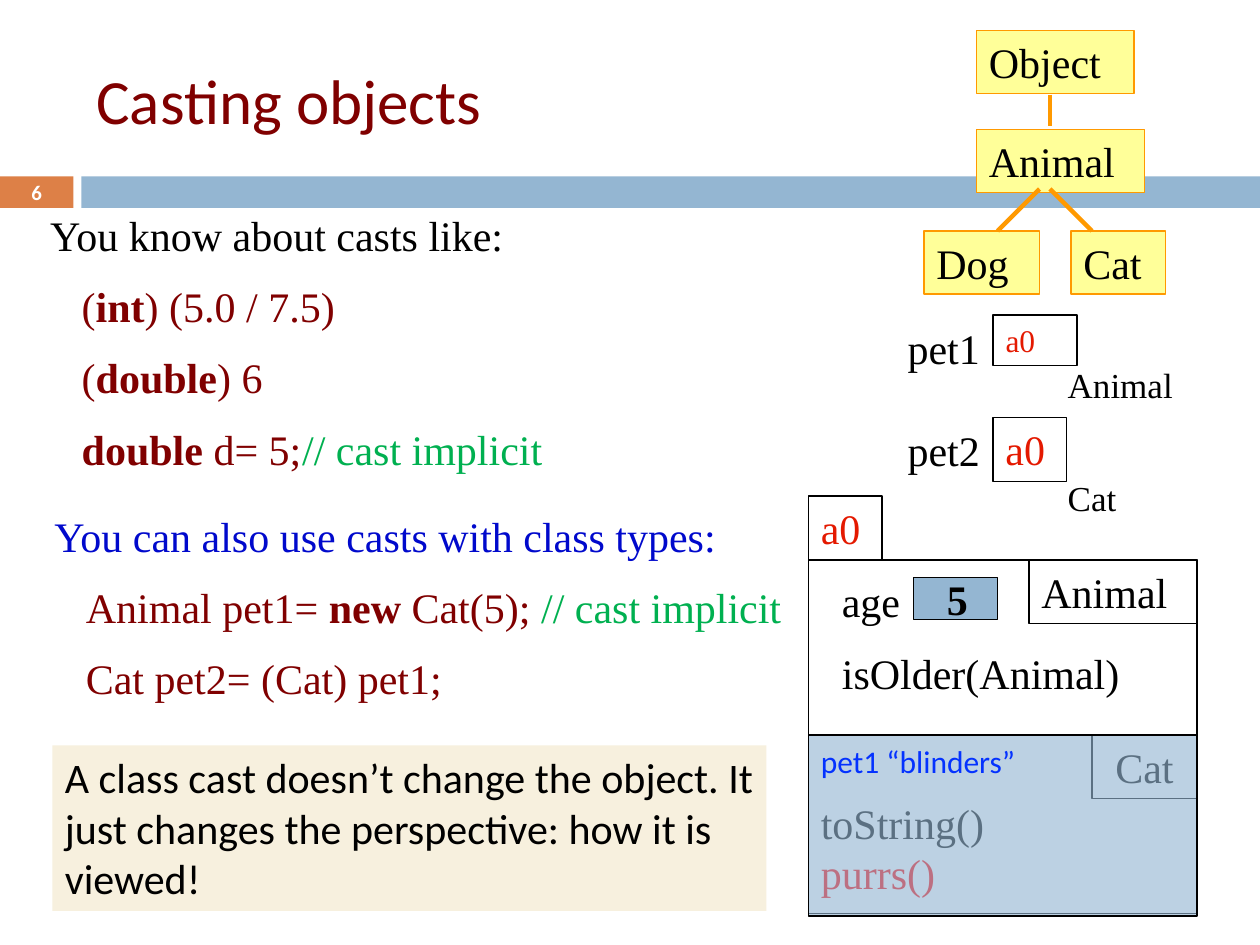
from lxml import etree
from pptx import Presentation
from pptx.dml.color import RGBColor
from pptx.enum.shapes import MSO_CONNECTOR, MSO_SHAPE
from pptx.enum.text import MSO_ANCHOR, PP_ALIGN
from pptx.oxml.ns import qn
from pptx.util import Pt

RECTANGLE, STRAIGHT = MSO_SHAPE.RECTANGLE, MSO_CONNECTOR.STRAIGHT
TOP, MIDDLE = MSO_ANCHOR.TOP, MSO_ANCHOR.MIDDLE
LEFT, CENTER, RIGHT = PP_ALIGN.LEFT, PP_ALIGN.CENTER, PP_ALIGN.RIGHT

SERIF, SANS = "Times New Roman", "Calibri"
BLACK, WHITE, MAROON, GREEN = "000000", "FFFFFF", "800000", "00B050"
RED, NAVY, BLUE, STEEL = "E41900", "0009CC", "0432FF", "94B6D2"
YELLOW, ORANGE, CREAM, RUST = "FFFF99", "FF9900", "F7F0DE", "DD8047"
INDENT, COMMENT_TAB = 18, 173.5

# Paragraphs: (first-line indent, [(text, colour, bold), ...])
PRIMITIVE_CASTS = [
    (0, [("You know about casts like:", BLACK, False)]),
    (INDENT, [("(", MAROON, False), ("int", MAROON, True), (") (5.0 / 7.5)", MAROON, False)]),
    (INDENT, [("(", MAROON, False), ("double", MAROON, True), (") 6", MAROON, False)]),
    (INDENT, [("double", MAROON, True), (" d= 5;\t", MAROON, False),
              ("// cast implicit", GREEN, False)]),
]
CLASS_CASTS = [
    (0, [("You can also use casts with class types:", NAVY, False)]),
    (INDENT, [("Animal pet1= ", MAROON, False), ("new", MAROON, True),
              (" Cat(5); ", MAROON, False), ("// cast implicit", GREEN, False)]),
    (INDENT, [("Cat pet2= (Cat) pet1;", MAROON, False)]),
]
NOTE = ("A class cast doesn’t change the object. It just changes "
        "the perspective: how it is viewed!")

# Class tree: name, left, top, width; then edges
CLASSES = [("Object", 558, 17.3, 90), ("Animal", 558, 74, 96),
           ("Dog", 528, 132, 66), ("Cat", 612, 132, 54)]
CLASS_HEIGHT = 36
EDGES = [(600, 54, 600, 72), (600, 108, 624, 132), (594, 108, 570, 132)]

# Variables: name, type, top, slot width, slot height, value size, type top
VARIABLES = [("pet1", "Animal", 180, 48, 29, 18, 204),
             ("pet2", "Cat", 238.5, 42, 36.5, 24, 268.5)]

# Object a0: frame, and the tabs on it as text, left, top, width, colour, alignment
OBJECT_LEFT, OBJECT_TOP, OBJECT_WIDTH, OBJECT_HEIGHT = 462, 320, 222, 202
OBJECT_RIGHT, TAB_HEIGHT, DIVIDER = OBJECT_LEFT + OBJECT_WIDTH, 36.5, 420
TABS = [("a0", OBJECT_LEFT, OBJECT_TOP - TAB_HEIGHT, 42, RED, LEFT),
        ("Animal", OBJECT_RIGHT - 96, OBJECT_TOP, 96, BLACK, LEFT),
        ("Cat", OBJECT_RIGHT - 60, DIVIDER, 60, BLACK, CENTER)]


def rgb(color):
    return RGBColor.from_string(color)


def plain(text, color=BLACK, bold=False):
    return [(0, [(text, color, bold)])]


def write(shape, paragraphs, size=24, font=SERIF, align=LEFT, anchor=TOP, gap=12, wrap=True):
    frame = shape.text_frame
    frame.word_wrap = wrap
    frame.vertical_anchor = anchor
    for index, (indent, runs) in enumerate(paragraphs):
        paragraph = frame.paragraphs[0] if index == 0 else frame.add_paragraph()
        paragraph.alignment = align
        if index:
            paragraph.space_before = Pt(gap)
        if font == SERIF:
            paragraph.line_spacing = Pt(size * 1.2)
        properties = paragraph._p.get_or_add_pPr()
        if indent:
            properties.set("marL", "0")
            properties.set("indent", str(Pt(indent)))
        if any("\t" in text for text, _, _ in runs):
            tabs = etree.SubElement(properties, qn("a:tabLst"))
            etree.SubElement(tabs, qn("a:tab"), pos=str(Pt(COMMENT_TAB)), algn="l")
        for text, color, bold in runs:
            run = paragraph.add_run()
            run.text = text
            run.font.name, run.font.size, run.font.bold = font, Pt(size), bold
            run.font.color.rgb = rgb(color)


def add_text(slide, box, paragraphs, **style):
    write(slide.shapes.add_textbox(*map(Pt, box)), paragraphs, **style)


def add_box(slide, box, fill=None, line=None, paragraphs=(), **style):
    shape = slide.shapes.add_shape(RECTANGLE, *map(Pt, box))
    shape.shadow.inherit = False
    if fill:
        shape.fill.solid()
        shape.fill.fore_color.rgb = rgb(fill)
    else:
        shape.fill.background()
    if line:
        shape.line.color.rgb = rgb(line)
        shape.line.width = Pt(0.75)
    else:
        shape.line.fill.background()
    if paragraphs:
        write(shape, paragraphs, **style)
    return shape


def add_line(slide, ends, color, width):
    connector = slide.shapes.add_connector(STRAIGHT, *map(Pt, ends))
    connector.line.color.rgb = rgb(color)
    connector.line.width = Pt(width)
    etree.SubElement(connector._element.spPr, qn("a:effectLst"))


def main():
    presentation = Presentation()
    presentation.slide_width, presentation.slide_height = Pt(720), Pt(540)
    slide = presentation.slides.add_slide(presentation.slide_layouts[6])

    # Header
    add_box(slide, (0, 100.8, 42, 18), RUST)
    add_box(slide, (46.5, 100.8, 673.5, 18), STEEL)
    add_text(slide, (48, 18, 642, 78), plain("Casting objects", MAROON),
             size=36, font=SANS, anchor=MIDDLE)
    add_text(slide, (0, 100, 42, 19.5), plain("6", WHITE, True),
             size=11.9, font=SANS, align=CENTER, anchor=MIDDLE)

    # Object a0 and its members
    add_box(slide, (OBJECT_LEFT, OBJECT_TOP, OBJECT_WIDTH, OBJECT_HEIGHT), WHITE, BLACK)
    for text, left, top, width, color, align in TABS:
        add_box(slide, (left, top, width, TAB_HEIGHT), None, BLACK,
                plain(text, color), align=align)
    add_line(slide, (OBJECT_LEFT, DIVIDER, 636, DIVIDER), BLACK, 0.75)
    add_text(slide, (OBJECT_LEFT, 452, 216, 65),
             plain("toString()") + plain("purrs()", "FF0000"), gap=0)
    add_text(slide, (474, 325.5, 210, 80), plain("age") + plain("isOlder(Animal)"))
    add_box(slide, (522, 330, 48, 24), STEEL, BLACK)
    add_text(slide, (534, 324, 24, 36.5), plain("5", BLACK, True))

    # Explanations
    add_text(slide, (21.6, 116, 431, 167), PRIMITIVE_CASTS)
    add_text(slide, (24, 288, 432, 124), CLASS_CASTS)
    add_box(slide, (30, 426, 408, 94.5), CREAM, None, plain(NOTE), font=SANS)

    # Class tree
    for name, left, top, width in CLASSES:
        add_box(slide, (left, top, width, CLASS_HEIGHT), YELLOW, ORANGE, plain(name))
    for edge in EDGES:
        add_line(slide, edge, ORANGE, 2.5)

    # Variables
    for name, kind, top, width, height, size, kind_top in VARIABLES:
        add_text(slide, (504, top + 0.5, 63, 36), plain(name), align=RIGHT)
        add_box(slide, (567.5, top, width, height), WHITE, BLACK,
                plain("a0", RED), size=size)
        add_text(slide, (603, kind_top, 87, 31), plain(kind), size=20)

    # Translucent cover over the Cat part
    blinders = add_box(slide, (OBJECT_LEFT, 420.5, OBJECT_WIDTH, 103), STEEL, BLACK,
                       plain("pet1 “blinders”", BLUE), size=18, font=SANS, wrap=False)
    color = blinders._element.spPr.find(qn("a:solidFill"))[0]
    etree.SubElement(color, qn("a:alpha"), val="62000")

    presentation.save("out.pptx")


if __name__ == "__main__":
    main()
